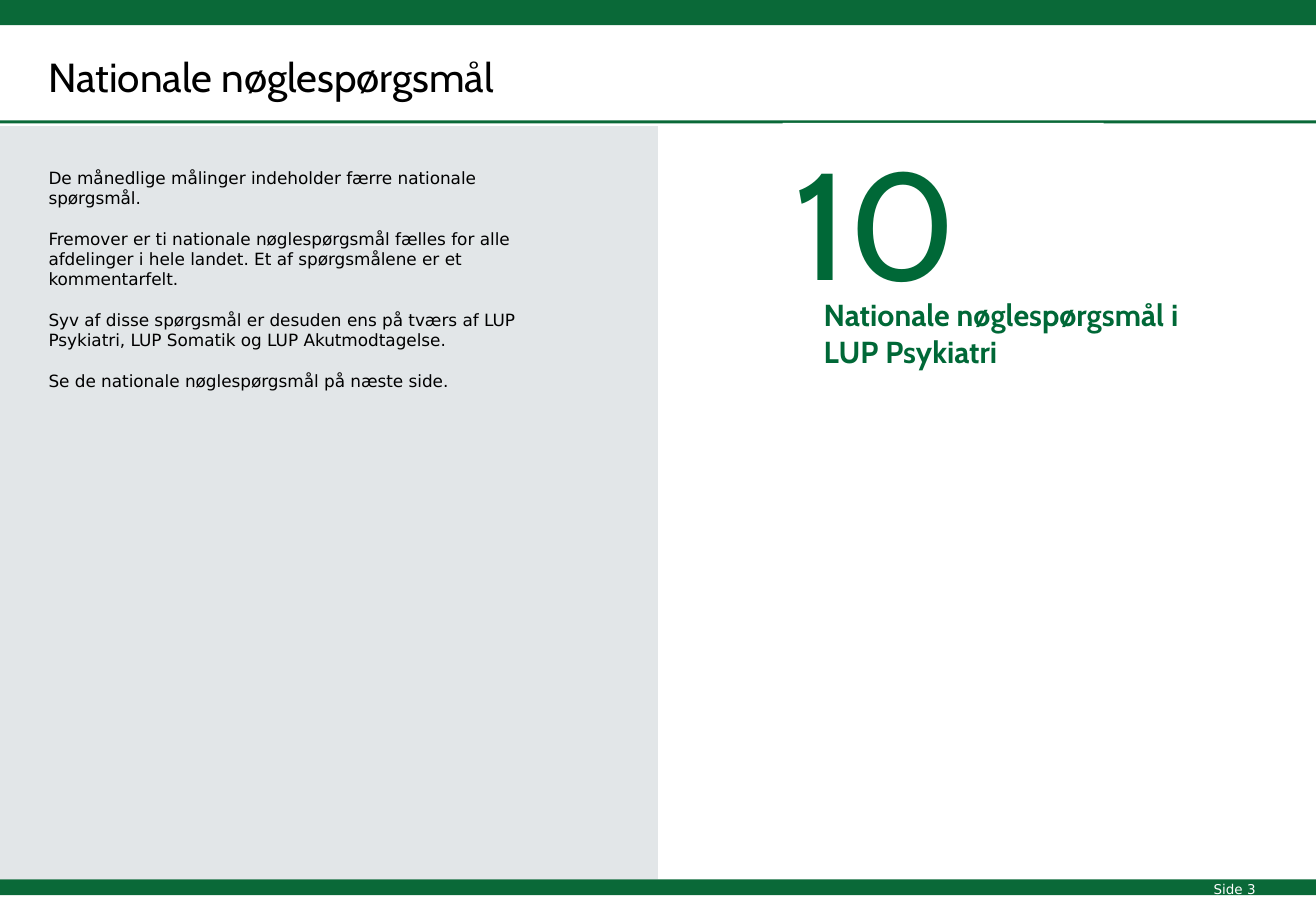
from lxml import etree
from pptx import Presentation
from pptx.dml.color import RGBColor
from pptx.enum import shapes, text
from pptx.oxml import ns
from pptx.util import Cm, Pt

GREEN = RGBColor(0x0A, 0x69, 0x38)
DARK_GREEN = RGBColor(0x00, 0x68, 0x37)
SLATE = RGBColor(0x42, 0x5B, 0x67)
BLACK = RGBColor(0, 0, 0)
WHITE = RGBColor(255, 255, 255)
HEADING_FONT = "Cabin"
BODY_FONT = "DejaVu Sans"

TITLE = "Nationale nøglespørgsmål"
BODY = [
    "De månedlige målinger indeholder færre nationale spørgsmål.",
    "Fremover er ti nationale nøglespørgsmål fælles for alle afdelinger "
    "i hele landet. Et af spørgsmålene er et kommentarfelt.",
    "Syv af disse spørgsmål er desuden ens på tværs af LUP Psykiatri, "
    "LUP Somatik og LUP Akutmodtagelse.",
    "Se de nationale nøglespørgsmål på næste side.",
]
COUNT = "10"
COUNT_LABEL = ["Nationale nøglespørgsmål i", "LUP Psykiatri"]
PAGE = "Side 3"

WIDTH, HEIGHT = 27.51, 19.05
FOOTER_TOP = 18.39
PANEL_TOP = 2.64
MARGIN = 0.76


def place(sp, left, top, width, height):
    sp.left, sp.top = Cm(left), Cm(top)
    sp.width, sp.height = Cm(width), Cm(height)
    return sp


def add_rect(s, box, color, alpha=None):
    sp = s.shapes.add_shape(shapes.MSO_SHAPE.RECTANGLE, *map(Cm, box))
    sp.shadow.inherit = False
    sp.fill.solid()
    sp.fill.fore_color.rgb = color
    sp.line.fill.background()
    if alpha is not None:
        clr = sp.element.spPr.find(".//" + ns.qn("a:srgbClr"))
        etree.SubElement(clr, ns.qn("a:alpha"), val=str(alpha * 1000))
    return sp


def write(sp, lines, size, font=HEADING_FONT, color=BLACK, bold=False,
          gap=0, wrap=True):
    tf = sp.text_frame
    tf.word_wrap = wrap
    tf.auto_size = text.MSO_AUTO_SIZE.NONE
    tf.vertical_anchor = text.MSO_ANCHOR.TOP
    for i, line in enumerate(lines):
        p = tf.add_paragraph() if i else tf.paragraphs[0]
        pPr = p._p.get_or_add_pPr()
        pPr.set("marL", "0")
        pPr.set("indent", "0")
        etree.SubElement(pPr, ns.qn("a:buNone"))
        p.alignment = text.PP_ALIGN.LEFT
        p.space_before = Pt(gap if i else 0)
        r = p.add_run()
        r.text = line
        r.font.name = font
        r.font.size = Pt(size)
        r.font.bold = bold
        r.font.color.rgb = color


prs = Presentation()
prs.slide_width, prs.slide_height = Cm(WIDTH), Cm(HEIGHT)
s = prs.slides.add_slide(prs.slide_layouts[1])
title, body = s.placeholders

bands = [
    add_rect(s, (0, FOOTER_TOP, WIDTH, 0.33), GREEN),
    add_rect(s, (0, 0, WIDTH, 0.53), GREEN),
    add_rect(s, (0, 2.52, WIDTH, 0.06), GREEN),
    add_rect(s, (0, PANEL_TOP, WIDTH / 2, FOOTER_TOP - PANEL_TOP), SLATE, 15),
]
for i, band in enumerate(bands):
    s.shapes.element.insert(2 + i, band.element)

write(place(title, MARGIN, 0.97, 13.51, 1.27), [TITLE], 24)
write(place(body, MARGIN, 3.38, 10.87, 4.95), BODY, 10, font=BODY_FONT, gap=12)

page = s.shapes.add_textbox(Cm(25.12), Cm(18.29), Cm(1.42), Cm(0.6))
write(page, [PAGE], 8, font=BODY_FONT, color=WHITE, wrap=False)

count = add_rect(s, (16.36, 2.57, 6.71, 4.11), WHITE)
write(count, [COUNT], 90, color=DARK_GREEN)

label = s.shapes.add_textbox(Cm(16.97), Cm(6.07), Cm(10.54), Cm(1.8))
write(label, COUNT_LABEL, 18, color=DARK_GREEN, bold=True)

prs.save("out.pptx")
